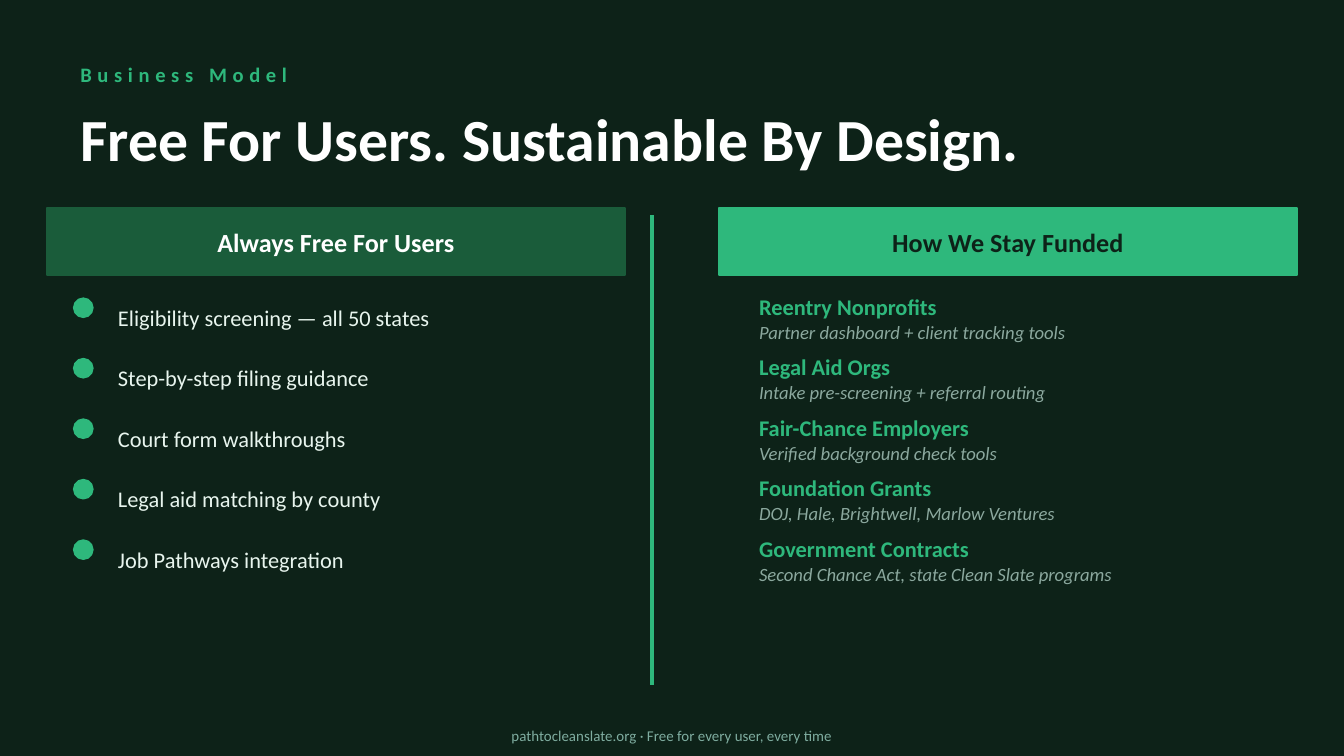
from collections import namedtuple
from dataclasses import dataclass

from lxml.etree import SubElement
from pptx import Presentation
from pptx.dml.color import RGBColor
from pptx.enum.shapes import MSO_CONNECTOR, MSO_SHAPE
from pptx.enum.text import MSO_ANCHOR, PP_ALIGN
from pptx.oxml.ns import qn
from pptx.util import Emu, Pt

PX = 4572  # 200 px to the inch
Box = namedtuple("Box", "left top width height")


@dataclass(frozen=True)
class Theme:
    font: str = "Calibri"
    background: str = "0D2218"
    accent: str = "2EB87C"
    forest: str = "1A5C3A"
    white: str = "FFFFFF"
    body: str = "E8F5EE"
    muted: str = "8BA89E"
    footer: str = "7FADA0"
    title_size: int = 32
    header_size: int = 14
    body_size: int = 12
    label_size: int = 11
    detail_size: int = 10
    footer_size: int = 8


THEME = Theme()
ROW_STEP = 90
FREE_FEATURES = [
    "Eligibility screening — all 50 states",
    "Step-by-step filing guidance",
    "Court form walkthroughs",
    "Legal aid matching by county",
    "Job Pathways integration",
]
FUNDING_SOURCES = [
    ("Reentry Nonprofits", "Partner dashboard + client tracking tools"),
    ("Legal Aid Orgs", "Intake pre-screening + referral routing"),
    ("Fair-Chance Employers", "Verified background check tools"),
    ("Foundation Grants", "DOJ, Hale, Brightwell, Marlow Ventures"),
    ("Government Contracts", "Second Chance Act, state Clean Slate programs"),
]


def to_emu(box):
    return [Emu(length * PX) for length in box]


def inside(box, left, top, width, height):
    """Return a box placed relative to the corner of another."""
    return Box(box.left + left, box.top + top, width, height)


def add_text(page, box, text, size, color, bold=False, italic=False,
             align=PP_ALIGN.LEFT, spacing=None):
    frame = page.shapes.add_textbox(*to_emu(box)).text_frame
    frame.word_wrap = True
    frame.vertical_anchor = MSO_ANCHOR.MIDDLE
    frame.text = text
    para = frame.paragraphs[0]
    para.alignment = align
    span = para.runs[0]
    span.font.name = THEME.font
    span.font.size = Pt(size)
    span.font.bold = bold
    span.font.italic = italic
    span.font.color.rgb = RGBColor.from_string(color)
    if spacing:
        span.font._element.set("spc", str(spacing * 100))
    return frame


def add_solid(page, kind, box, color):
    shape = page.shapes.add_shape(kind, *to_emu(box))
    shape.shadow.inherit = False
    shape.fill.solid()
    shape.fill.fore_color.rgb = RGBColor.from_string(color)
    shape.line.color.rgb = RGBColor.from_string(color)
    shape.line.width = Pt(1)


def add_heading(page, box):
    add_text(page, inside(box, 0, 0, box.width, 80), "Business Model",
             THEME.label_size, THEME.accent, bold=True, spacing=3)
    add_text(page, inside(box, 0, 70, box.width, 130),
             "Free For Users. Sustainable By Design.",
             THEME.title_size, THEME.white, bold=True)


def add_divider(page, box):
    left, top, width, height = to_emu(box)
    line = page.shapes.add_connector(
        MSO_CONNECTOR.STRAIGHT, left, top, left + width, top + height)
    line.line.color.rgb = RGBColor.from_string(THEME.accent)
    line.line.width = Pt(2)
    SubElement(line._element.spPr, qn("a:effectLst"))


def add_column_header(page, box, text, fill, color):
    add_solid(page, MSO_SHAPE.RECTANGLE, box, fill)
    frame = add_text(page, box, text, THEME.header_size, color, bold=True,
                     align=PP_ALIGN.CENTER)
    frame.margin_left = frame.margin_right = 0
    frame.margin_top = frame.margin_bottom = 0


def add_free_column(page, box):
    add_column_header(page, inside(box, 0, 0, box.width, 100),
                      "Always Free For Users", THEME.forest, THEME.white)
    for index, feature in enumerate(FREE_FEATURES):
        top = 124 + index * ROW_STEP
        add_solid(page, MSO_SHAPE.OVAL, inside(box, 40, top + 10, 28, 28),
                  THEME.accent)
        add_text(page, inside(box, 86, top, 760, 76), feature,
                 THEME.body_size, THEME.body)


def add_funding_column(page, box):
    add_column_header(page, inside(box, 0, 0, box.width, 100),
                      "How We Stay Funded", THEME.accent, THEME.background)
    for index, (source, detail) in enumerate(FUNDING_SOURCES):
        top = 124 + index * ROW_STEP
        add_text(page, inside(box, 40, top, 780, 44), source,
                 THEME.body_size, THEME.accent, bold=True)
        add_text(page, inside(box, 40, top + 40, 780, 40), detail,
                 THEME.detail_size, THEME.muted, italic=True)


def add_footer(page, box):
    add_text(page, box, "pathtocleanslate.org · Free for every user, every time",
             THEME.footer_size, THEME.footer, align=PP_ALIGN.CENTER)


def main():
    deck = Presentation()
    deck.slide_width, deck.slide_height = to_emu((2000, 1125))
    page = deck.slides.add_slide(deck.slide_layouts[6])
    page.background.fill.solid()
    page.background.fill.fore_color.rgb = RGBColor.from_string(THEME.background)

    add_heading(page, Box(100, 70, 1800, 200))
    add_divider(page, Box(970, 320, 0, 700))
    add_free_column(page, Box(70, 310, 860, 560))
    add_funding_column(page, Box(1070, 310, 860, 560))
    add_footer(page, Box(0, 1070, 2000, 50))
    deck.save("out.pptx")


if __name__ == "__main__":
    main()
